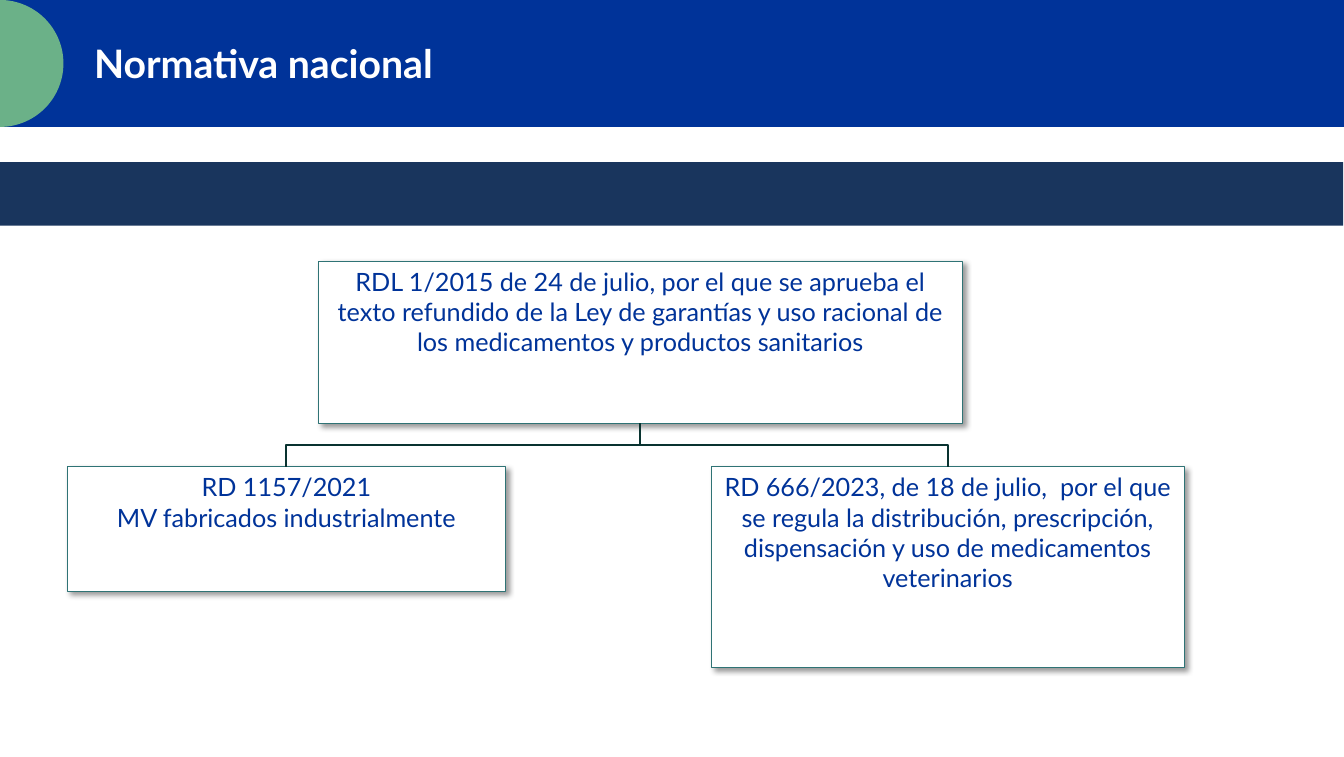
import math
from collections import namedtuple

import lxml.etree
import pptx
import pptx.dml.color
import pptx.enum.shapes
import pptx.enum.text
import pptx.oxml
import pptx.oxml.ns
import pptx.util

RGBColor = pptx.dml.color.RGBColor
MSO_SHAPE = pptx.enum.shapes.MSO_SHAPE
PP_ALIGN = pptx.enum.text.PP_ALIGN

BLUE = RGBColor(0x00, 0x33, 0x99)
NAVY = RGBColor(0x19, 0x35, 0x5D)
GREEN = RGBColor(0x6B, 0xB1, 0x88)
TEAL = RGBColor(0x2F, 0x73, 0x75)
DARK_TEAL = RGBColor(0x09, 0x33, 0x30)
WHITE = RGBColor(0xFF, 0xFF, 0xFF)
FONT = "Lato"

# Square grid: 160 columns across the slide
CELL = pptx.util.Inches(1 / 12)
COLUMNS, ROWS = 160, 90.12

Box = namedtuple("Box", "left top width height")

BASE_LAW = ["RDL 1/2015 de 24 de julio, por el que se aprueba el texto refundido de la Ley de "
            "garantías y uso racional de los medicamentos y productos sanitarios"]
MANUFACTURE = ["RD 1157/2021", "MV fabricados industrialmente"]
DISTRIBUTION = ["RD 666/2023, de 18 de julio,  por el que se regula la distribución, prescripción, "
                "dispensación y uso de medicamentos veterinarios"]


def cells(*lengths):
    return [round(length * CELL) for length in lengths]


def paint(shape, color):
    shape.shadow.inherit = False
    shape.fill.solid()
    shape.fill.fore_color.rgb = color
    shape.line.fill.background()


def add_bar(page, box, color, kind=MSO_SHAPE.RECTANGLE):
    bar = page.shapes.add_shape(kind, *cells(*box))
    paint(bar, color)
    return bar


def style(para, size, color, align, bold=False):
    para.alignment = align
    para.font.name = FONT
    para.font.size = pptx.util.Pt(size)
    para.font.color.rgb = color
    para.font.bold = bold


def add_header(page, box, text):
    add_bar(page, box, BLUE)

    # Half disc on the left edge
    radius = box.height / 2
    angles = [math.radians(degree) for degree in range(-90, 91, 3)]
    points = [cells(box.left + radius * math.cos(angle),
                    box.top + radius + radius * math.sin(angle)) for angle in angles]
    outline = page.shapes.build_freeform(*points[0])
    outline.add_line_segments(points[1:])
    paint(outline.convert_to_shape(), GREEN)

    # Title, brought in front of the bar
    title = page.shapes.title
    title.left, title.top, title.width, title.height = cells(
        box.left + 10, box.top + 4.08, 127, 6.24)
    frame = title.text_frame
    frame.text = text
    frame.auto_size = pptx.enum.text.MSO_AUTO_SIZE.NONE
    frame.vertical_anchor = pptx.enum.text.MSO_ANCHOR.TOP
    style(frame.paragraphs[0], 28, WHITE, PP_ALIGN.LEFT, bold=True)
    page.shapes._spTree.append(title._element)


def add_shadow(shape):
    shape.shadow.inherit = False
    effects = shape._element.spPr.find(pptx.oxml.ns.qn("a:effectLst"))
    effects.append(pptx.oxml.parse_xml(
        f'<a:outerShdw {pptx.oxml.ns.nsdecls("a")} blurRad="50800" dist="38100" dir="2700000" '
        'algn="tl" rotWithShape="0"><a:srgbClr val="000000"><a:alpha val="40000"/>'
        '</a:srgbClr></a:outerShdw>'))


def add_law(page, box, lines):
    law = add_bar(page, box, WHITE)
    law.line.color.rgb = TEAL
    law.line.width = pptx.util.Pt(0.75)
    add_shadow(law)
    frame = law.text_frame
    frame.word_wrap = True
    frame.vertical_anchor = pptx.enum.text.MSO_ANCHOR.TOP
    frame.text = "\n".join(lines)
    for para in frame.paragraphs:
        style(para, 18, BLUE, PP_ALIGN.CENTER)


def add_branch(page, parent, child):
    """Elbow from the parent's bottom middle to the child's top middle."""
    start_x, start_y = parent.left + parent.width / 2, parent.top + parent.height
    end_x, end_y = child.left + child.width / 2, child.top
    middle_x, middle_y = (start_x + end_x) / 2, (start_y + end_y) / 2
    drop, span = end_y - start_y, abs(end_x - start_x)
    # The frame lies on its side and is turned a quarter, so the elbow leaves downwards
    side = 1 if end_x < start_x else -1
    branch = page.shapes.add_connector(
        pptx.enum.shapes.MSO_CONNECTOR.ELBOW,
        *cells(middle_x - side * drop / 2, middle_y - span / 2,
               middle_x + side * drop / 2, middle_y + span / 2))
    branch._element.spPr.xfrm.set("rot", "5400000" if side == 1 else "16200000")
    branch.line.color.rgb = DARK_TEAL
    branch.line.width = pptx.util.Pt(1.5)
    lxml.etree.SubElement(branch._element.spPr, pptx.oxml.ns.qn("a:effectLst"))


def add_law_tree(page, box):
    second_row = box.top + 24.48
    parent = Box(box.left + 29.88, box.top, 76.68, 19.32)
    left_child = Box(box.left, second_row, 52.2, 14.88)
    right_child = Box(box.left + box.width - 56.28, second_row, 56.28, 23.88)
    add_law(page, right_child, DISTRIBUTION)
    add_law(page, left_child, MANUFACTURE)
    add_law(page, parent, BASE_LAW)
    for child in (left_child, right_child):
        add_branch(page, parent, child)


def main():
    deck = pptx.Presentation()
    deck.slide_width, deck.slide_height = cells(COLUMNS, ROWS)
    page = deck.slides.add_slide(deck.slide_layouts.get_by_name("Title Only"))

    add_header(page, Box(0, 0, COLUMNS, 15.12), "Normativa nacional")
    band = add_bar(page, Box(-0.1, 19.32, COLUMNS, 7.56), NAVY, MSO_SHAPE.ROUNDED_RECTANGLE)
    band.adjustments[0] = 0
    add_law_tree(page, Box(8, 31.08, 132.96, 48.36))

    deck.save("out.pptx")


if __name__ == "__main__":
    main()
